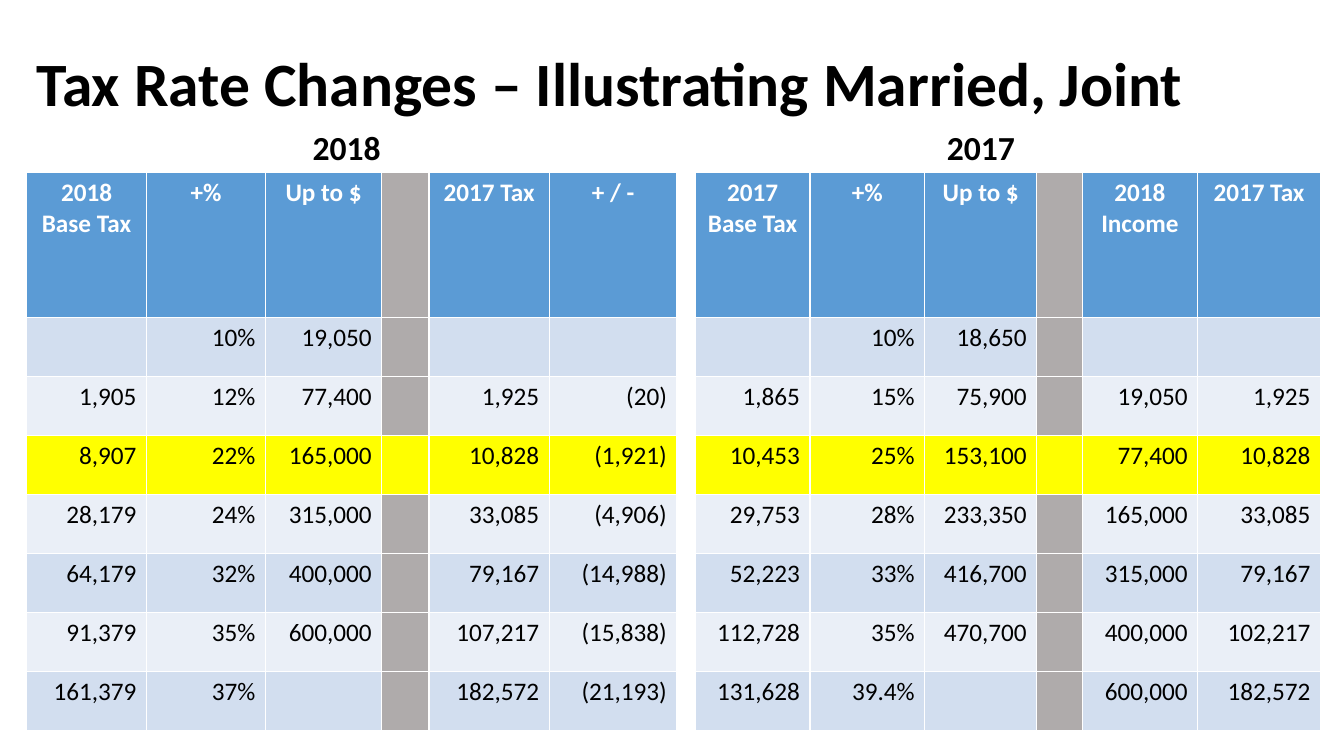
from pptx import Presentation
from pptx.dml.color import RGBColor
from pptx.enum.text import MSO_ANCHOR as ANCHOR, MSO_AUTO_SIZE as AUTO, PP_ALIGN as ALIGN
from pptx.util import Pt

BLACK, WHITE = "000000", "FFFFFF"
BLUE, GREY, YELLOW = "5B9BD5", "AFABAB", "FFFF00"
BANDS = ["EAEFF7", "D2DEEF"]  # even and odd rows
HIGHLIGHT_ROW, GAP_COL = 3, 3
HEADER_H, ROW_H = 103.7, 42.2


def rgb(color):
    return RGBColor.from_string(color)


def style(p, size, color, bold, align):
    p.alignment = align
    for r in p.runs:
        r.font.name = "Calibri"
        r.font.size = Pt(size)
        r.font.bold = bold
        r.font.color.rgb = rgb(color)


prs = Presentation()
prs.slide_width, prs.slide_height = Pt(960), Pt(540)
s = prs.slides.add_slide(prs.slide_layouts.get_by_name("Comparison"))
holders = {sp.placeholder_format.idx: sp for sp in s.placeholders}

# Title and year headings: placeholder, text, box, size, alignment, anchor, space before
headings = [
    (0, "Tax Rate Changes – Illustrating Married, Joint",
     (18.7, 28.8, 924.5, 65.5), 44, ALIGN.LEFT, ANCHOR.MIDDLE, 0),
    (1, "2018", (18.7, 87.8, 458, 35.3), 24, ALIGN.CENTER, ANCHOR.BOTTOM, 10),
    (3, "2017", (491.8, 87.8, 417.6, 35.3), 24, ALIGN.CENTER, ANCHOR.BOTTOM, 10),
]
for idx, text, box, size, align, anchor, before in headings:
    sp = holders[idx]
    sp.left, sp.top, sp.width, sp.height = map(Pt, box)
    tf = sp.text_frame
    tf.text = text
    tf.auto_size = AUTO.NONE
    tf.word_wrap = True
    tf.vertical_anchor = anchor
    p = tf.paragraphs[0]
    p.line_spacing = 0.9
    p.space_before = Pt(before)
    style(p, size, BLACK, True, align)

# The tables take the place of the content placeholders
for idx in (2, 4):
    el = holders[idx].element
    el.getparent().remove(el)

# Tables: left edge, column widths, rows
tables = [
    (19, [85.7, 85, 83, 33.8, 86, 91.2], [
        ["2018 Base Tax", "+%", "Up to $", "", "2017 Tax", "+ / -"],
        ["", "10%", "19,050", "", "", ""],
        ["1,905", "12%", "77,400", "", "1,925", "(20)"],
        ["8,907", "22%", "165,000", "", "10,828", "(1,921)"],
        ["28,179", "24%", "315,000", "", "33,085", "(4,906)"],
        ["64,179", "32%", "400,000", "", "79,167", "(14,988)"],
        ["91,379", "35%", "600,000", "", "107,217", "(15,838)"],
        ["161,379", "37%", "", "", "182,572", "(21,193)"],
    ]),
    (496.6, [82, 82, 80, 32.5, 82.5, 87.7], [
        ["2017 Base Tax", "+%", "Up to $", "", "2018 Income", "2017 Tax"],
        ["", "10%", "18,650", "", "", ""],
        ["1,865", "15%", "75,900", "", "19,050", "1,925"],
        ["10,453", "25%", "153,100", "", "77,400", "10,828"],
        ["29,753", "28%", "233,350", "", "165,000", "33,085"],
        ["52,223", "33%", "416,700", "", "315,000", "79,167"],
        ["112,728", "35%", "470,700", "", "400,000", "102,217"],
        ["131,628", "39.4%", "", "", "600,000", "182,572"],
    ]),
]
for left, widths, rows in tables:
    height = HEADER_H + ROW_H * (len(rows) - 1)
    table = s.shapes.add_table(len(rows), len(widths), Pt(left), Pt(123.1),
                               Pt(sum(widths)), Pt(height)).table
    for col, width in zip(table.columns, widths):
        col.width = Pt(width)
    for i, row in enumerate(rows):
        header = i == 0
        table.rows[i].height = Pt(HEADER_H if header else ROW_H)
        for j, text in enumerate(row):
            cell = table.cell(i, j)
            if i == HIGHLIGHT_ROW:
                fill = YELLOW
            elif j == GAP_COL:
                fill = GREY
            else:
                fill = BLUE if header else BANDS[i % 2]
            cell.fill.solid()
            cell.fill.fore_color.rgb = rgb(fill)
            cell.text = text
            style(cell.text_frame.paragraphs[0], 18, WHITE if header else BLACK,
                  header, ALIGN.CENTER if header else ALIGN.RIGHT)

prs.save("out.pptx")
